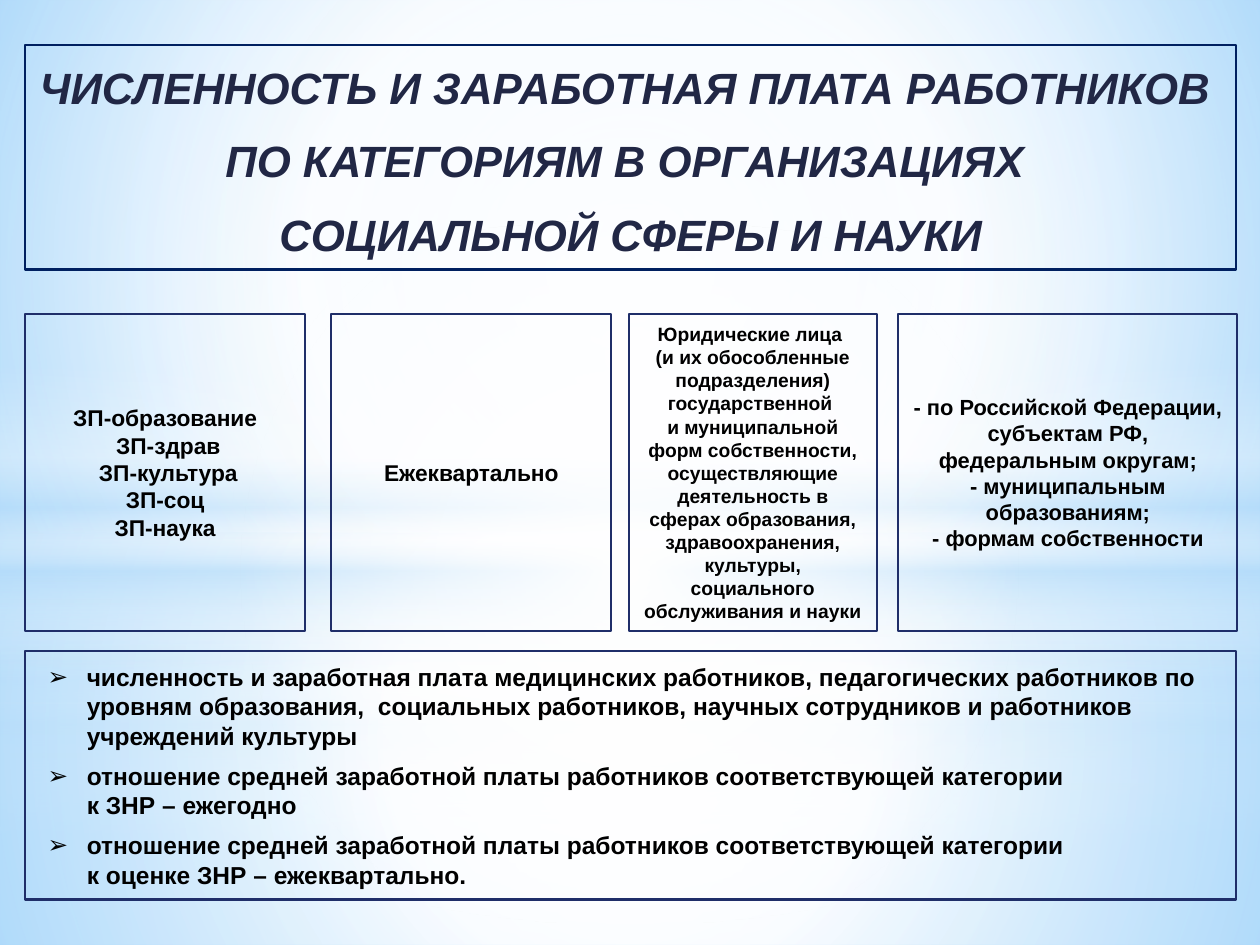
"""Build the slide on staff numbers and pay in the social sphere and science."""
from dataclasses import dataclass

from pptx import Presentation
from pptx.dml.color import RGBColor
from pptx.enum.shapes import MSO_SHAPE
from pptx.enum.text import MSO_ANCHOR, PP_ALIGN
from pptx.oxml import parse_xml
from pptx.oxml.ns import nsdecls, qn
from pptx.util import Inches, Pt

RECT, OVAL = MSO_SHAPE.RECTANGLE, MSO_SHAPE.OVAL
LEFT, CENTER = PP_ALIGN.LEFT, PP_ALIGN.CENTER
MIDDLE = MSO_ANCHOR.MIDDLE


@dataclass
class Theme:
    font: str = "Arial"
    white: str = "FFFFFF"
    sky: str = "B4DCFA"
    top: str = "9ED5FF"
    edge: str = "5BB9FF"
    navy: str = "002060"
    frame: str = "1F2E69"
    title: str = "212745"
    ink: str = "000000"
    head: float = 25
    body: float = 13
    small: float = 11
    scope: float = 12.5
    note: float = 14
    line: float = 1.25


theme = Theme()


def shade(root, stops, focus):
    """Replace the gradient in root; without a focus it runs downwards."""
    marks = "".join(
        f'<a:gs pos="{pos * 1000}"><a:srgbClr val="{color}">'
        f'<a:alpha val="{alpha * 1000}"/></a:srgbClr></a:gs>'
        for pos, color, alpha in stops)
    if focus:
        sides = " ".join(f'{side}="{size * 1000}"' for side, size in zip("ltrb", focus))
        way = f'<a:path path="circle"><a:fillToRect {sides}/></a:path>'
    else:
        way = '<a:lin ang="5400000" scaled="0"/>'
    old = root.find(".//" + qn("a:gradFill"))
    old.getparent().replace(old, parse_xml(
        f'<a:gradFill {nsdecls("a")} rotWithShape="1">'
        f'<a:gsLst>{marks}</a:gsLst>{way}</a:gradFill>'))


def panel(box, lines, size, color=theme.ink, edge=theme.frame, align=CENTER):
    """Add a framed box of bold text and return its paragraphs."""
    shape = slide.shapes.add_shape(RECT, *map(Inches, box))
    shape.shadow.inherit = False
    shape.fill.background()
    shape.line.color.rgb = RGBColor.from_string(edge)
    shape.line.width = Pt(theme.line)
    frame = shape.text_frame
    frame.word_wrap = True
    frame.vertical_anchor = MIDDLE
    for num, line in enumerate(lines):
        para = frame.add_paragraph() if num else frame.paragraphs[0]
        para.text = line
        para.alignment = align
        for run in para.runs:
            run.font.name = theme.font
            run.font.size = Pt(size)
            run.font.bold = True
            run.font.color.rgb = RGBColor.from_string(color)
    return frame.paragraphs


deck = Presentation()
deck.slide_width, deck.slide_height = Inches(10), Inches(7.5)
slide = deck.slides.add_slide(deck.slide_layouts[6])

slide.background.fill.gradient()
shade(slide.element,
      [(0, theme.top, 100), (60, theme.white, 100), (100, theme.edge, 100)],
      (20, 10, 20, 60))

white, sky = theme.white, theme.sky
core = (50, 50, 50, 50)
band = [(0, white, 0), (29, white, 30), (45, sky, 40),
        (55, white, 26), (65, sky, 60), (100, white, 0)]
layers = []
for split, beam, glow, low, high, rim in (
        (5.58, 4.12, 56, (91, 76), (89, 62), 79),
        (4.23, 2.9, 54, (92, 77), (90, 63), 80)):
    layers += [
        (RECT, split, 7.5 - split,
         [(0, white, low[0]), (37, white, low[1]), (100, sky, rim)], core),
        (RECT, 0, split,
         [(0, white, high[0]), (48, white, high[1]), (100, sky, rim)], core),
        (RECT, beam, 2.5, band, None),
        (OVAL, 1.75, 5.58, [(0, white, 100), (glow, white, 0)], core),
    ]
for kind, top, height, stops, focus in layers:
    layer = slide.shapes.add_shape(kind, 0, Inches(top), Inches(10), Inches(height))
    layer.shadow.inherit = False
    layer.line.fill.background()
    layer.fill.gradient()
    shade(layer.element, stops, focus)

heads = panel((0.2, 0.36, 9.61, 1.78), [
    "ЧИСЛЕННОСТЬ И ЗАРАБОТНАЯ ПЛАТА РАБОТНИКОВ ",
    "ПО КАТЕГОРИЯМ В ОРГАНИЗАЦИЯХ ",
    "СОЦИАЛЬНОЙ СФЕРЫ И НАУКИ",
], theme.head, theme.title, theme.navy)
for para in heads:
    para.line_spacing = 1.1
    para.space_before, para.space_after = Pt(6), Pt(3)
    para.runs[0].font.italic = True

cards = [
    (0.2, 2.22, theme.body, [
        "ЗП-образование", " ЗП-здрав", " ЗП-культура", "ЗП-соц", " ЗП-наука "]),
    (2.63, 2.22, theme.body, ["Ежеквартально"]),
    (4.99, 1.97, theme.small, [
        "Юридические лица ",
        "(и их обособленные подразделения) государственной ",
        "и муниципальной форм собственности, осуществляющие деятельность в "
        "сферах образования, здравоохранения, культуры, социального "
        "обслуживания и науки"]),
    (7.13, 2.69, theme.scope, [
        "- по Российской Федерации,",
        "субъектам РФ, федеральным округам;",
        "- муниципальным образованиям;",
        "- формам собственности"]),
]
for left, width, size, lines in cards:
    panel((left, 2.49, width, 2.52), lines, size)

notes = panel((0.2, 5.17, 9.61, 1.97), [
    "численность и заработная плата медицинских работников, педагогических "
    "работников по уровням образования,  социальных работников, научных "
    "сотрудников и работников учреждений культуры",
    "отношение средней заработной платы работников соответствующей категории \n"
    "к ЗНР – ежегодно",
    "отношение средней заработной платы работников соответствующей категории \n"
    "к оценке ЗНР – ежеквартально.",
], theme.note, align=LEFT)
for para in notes:
    if para is not notes[-1]:
        para.space_after = Pt(6)
    props = para._p.get_or_add_pPr()
    props.set("marL", str(Inches(0.39)))
    props.set("indent", str(Inches(-0.31)))
    props.append(parse_xml(f'<a:buFont {nsdecls("a")} typeface="{theme.font}"/>'))
    props.append(parse_xml(f'<a:buChar {nsdecls("a")} char="➢"/>'))

deck.save("out.pptx")
